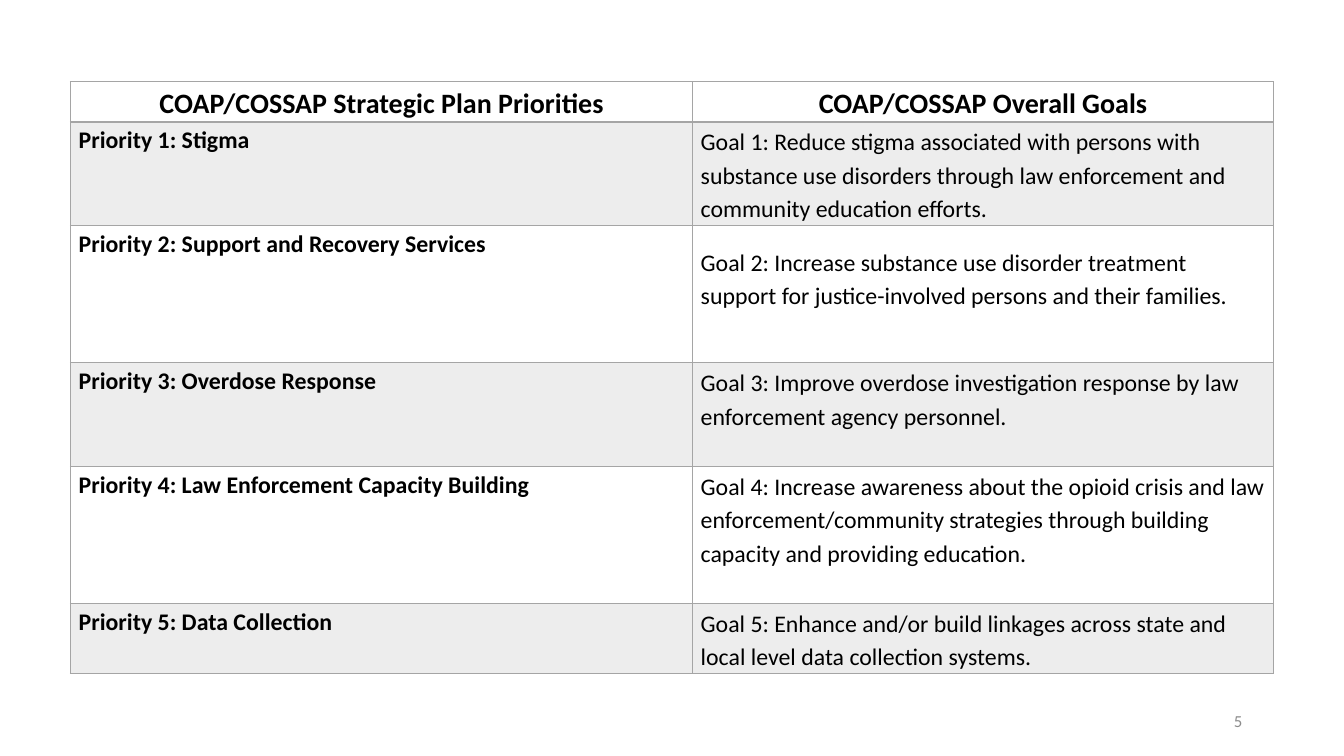
from dataclasses import dataclass

from lxml import etree
from pptx import Presentation
from pptx import util as u
from pptx.dml.color import RGBColor
from pptx.enum import text
from pptx.oxml import ns


@dataclass(frozen=True)
class Theme:
    font: str = "Calibri"
    ink: str = "000000"
    band: str = "EDEDED"
    rule: str = "A5A5A5"
    muted: str = "8C8C8C"
    header_size: int = 20
    body_size: int = 17
    number_size: int = 12


THEME = Theme()
HEADERS = ("COAP/COSSAP Strategic Plan Priorities", "COAP/COSSAP Overall Goals")
PRIORITIES = [
    ("Priority 1: Stigma", 1.03, 0,
     "Goal 1: Reduce stigma associated with persons with substance use disorders "
     "through law enforcement and community education efforts."),
    ("Priority 2: Support and Recovery Services", 1.36, 0.33,
     "Goal 2: Increase substance use disorder treatment\n"
     "support for justice-involved persons and their families."),
    ("Priority 3: Overdose Response", 1.03, 0.33,
     "Goal 3: Improve overdose investigation response by law enforcement agency personnel."),
    ("Priority 4: Law Enforcement Capacity Building", 1.36, 0.33,
     "Goal 4: Increase awareness about the opioid crisis and law enforcement/community "
     "strategies through building capacity and providing education."),
    ("Priority 5: Data Collection", 0.69, 0,
     "Goal 5: Enhance and/or build linkages across state and local level data collection systems."),
]


def style_paragraph(p, size, color, bold=False, align=text.PP_ALIGN.LEFT):
    p.alignment = align
    p.font.name = THEME.font
    p.font.size = u.Pt(size)
    p.font.bold = bold
    p.font.color.rgb = RGBColor.from_string(color)


def set_borders(cell, bottom):
    tcPr = cell._tc.get_or_add_tcPr()
    for side, width in (("L", 1), ("R", 1), ("T", 1), ("B", bottom)):
        ln = etree.SubElement(tcPr, ns.qn(f"a:ln{side}"), w=str(u.Pt(width)))
        fill = etree.SubElement(ln, ns.qn("a:solidFill"))
        etree.SubElement(fill, ns.qn("a:srgbClr"), val=THEME.rule)


def fill_cell(cell, words, size, bold, align=text.PP_ALIGN.LEFT,
              anchor=text.MSO_ANCHOR.TOP, bottom_gap=0, banded=False, bottom_rule=1):
    set_borders(cell, bottom_rule)
    if banded:
        cell.fill.solid()
        cell.fill.fore_color.rgb = RGBColor.from_string(THEME.band)
    else:
        cell.fill.background()
    cell.margin_left = cell.margin_right = u.Inches(0.08)
    cell.margin_top = 0
    cell.margin_bottom = u.Inches(bottom_gap)
    cell.vertical_anchor = anchor
    cell.text_frame.text = words
    for p in cell.text_frame.paragraphs:
        style_paragraph(p, size, THEME.ink, bold, align)
        p.line_spacing = 1.15


def add_priorities_table(s, left, top, width, height):
    table = s.shapes.add_table(len(PRIORITIES) + 1, 2, u.Inches(left), u.Inches(top),
                               u.Inches(width), u.Inches(height)).table
    table.first_row = table.horz_banding = False
    priority_width = 6.17
    table.columns[0].width = u.Inches(priority_width)
    table.columns[1].width = u.Inches(width - priority_width)
    table.rows[0].height = u.Inches(height - sum(row[1] for row in PRIORITIES))
    for col, header in enumerate(HEADERS):
        fill_cell(table.cell(0, col), header, THEME.header_size, True,
                  text.PP_ALIGN.CENTER, bottom_rule=2)
    for i, (priority, row_height, gap, goal) in enumerate(PRIORITIES, 1):
        banded = i % 2 == 1
        table.rows[i].height = u.Inches(row_height)
        fill_cell(table.cell(i, 0), priority, THEME.body_size, True, banded=banded)
        fill_cell(table.cell(i, 1), goal, THEME.body_size, False,
                  anchor=text.MSO_ANCHOR.MIDDLE, bottom_gap=gap, banded=banded)


def add_slide_number(s, left, top, width, height, number):
    sp = s.shapes.add_textbox(u.Inches(left), u.Inches(top), u.Inches(width), u.Inches(height))
    tf = sp.text_frame
    tf.word_wrap = True
    tf.vertical_anchor = text.MSO_ANCHOR.MIDDLE
    tf.text = number
    style_paragraph(tf.paragraphs[0], THEME.number_size, THEME.muted,
                    align=text.PP_ALIGN.RIGHT)


def main():
    prs = Presentation()
    prs.slide_width, prs.slide_height = u.Inches(13.33), u.Inches(7.5)
    s = prs.slides.add_slide(prs.slide_layouts[6])
    add_priorities_table(s, 0.7, 0.81, 11.93, 5.87)
    add_slide_number(s, 9.42, 6.95, 3, 0.4, "5")
    prs.save("out.pptx")


if __name__ == "__main__":
    main()
